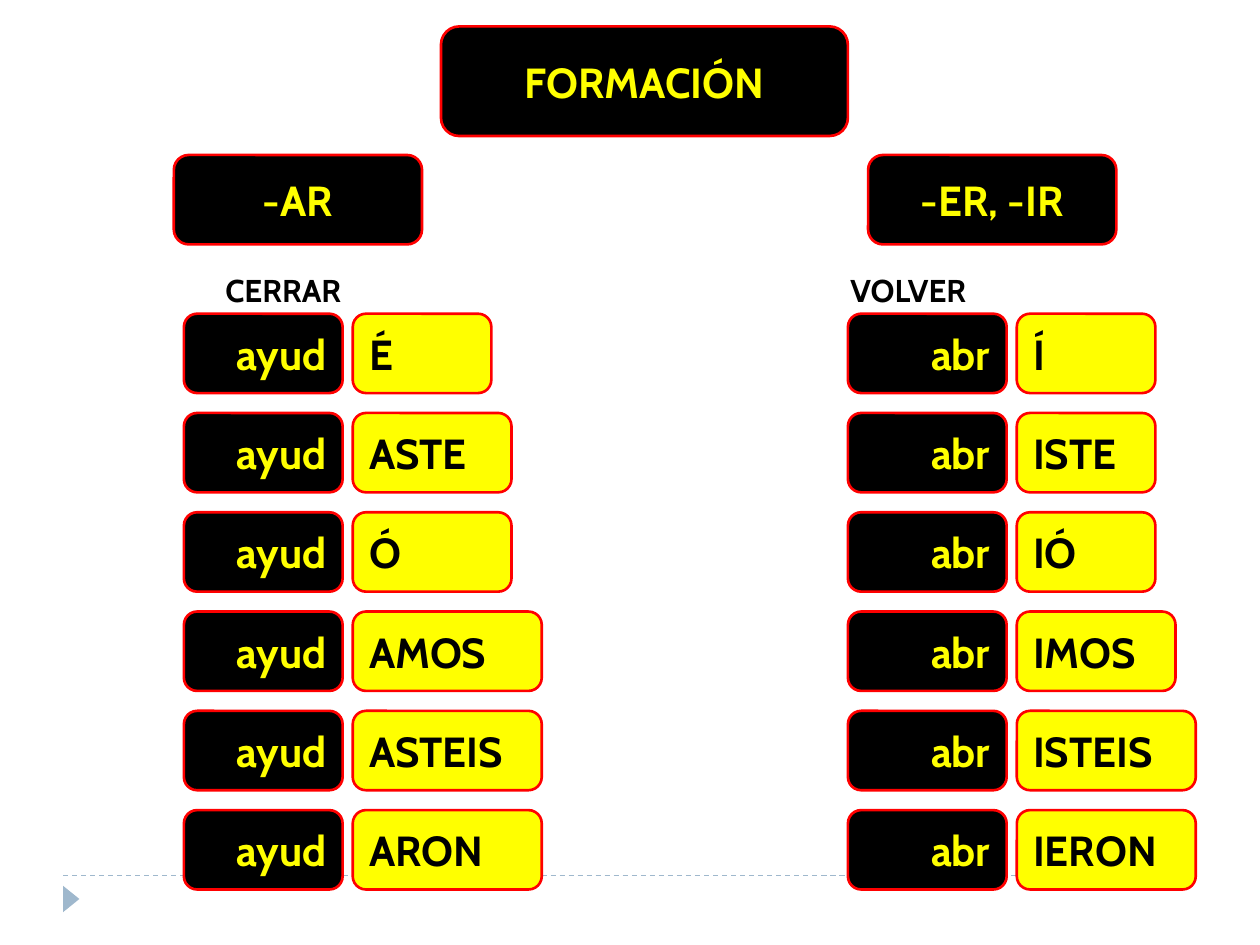
from dataclasses import dataclass

from lxml import etree
from pptx import Presentation
from pptx.dml.color import RGBColor
from pptx.enum.dml import MSO_LINE
from pptx.enum.shapes import MSO_CONNECTOR, MSO_SHAPE
from pptx.enum.text import MSO_ANCHOR, MSO_AUTO_SIZE, PP_ALIGN
from pptx.oxml.ns import qn
from pptx.util import Inches, Pt

DASH = MSO_LINE.DASH
STRAIGHT = MSO_CONNECTOR.STRAIGHT
ROUNDED, TRIANGLE = MSO_SHAPE.ROUNDED_RECTANGLE, MSO_SHAPE.ISOSCELES_TRIANGLE
MIDDLE = MSO_ANCHOR.MIDDLE
GROW = MSO_AUTO_SIZE.SHAPE_TO_FIT_TEXT
LEFT, CENTER, RIGHT = PP_ALIGN.LEFT, PP_ALIGN.CENTER, PP_ALIGN.RIGHT


@dataclass(frozen=True)
class Theme:
    """Font, type sizes and colours of the slide."""
    font: str = "Cabin"
    box_size: int = 24
    verb_size: int = 18
    black: RGBColor = RGBColor(0, 0, 0)
    yellow: RGBColor = RGBColor(255, 255, 0)
    red: RGBColor = RGBColor(255, 0, 0)
    accent: RGBColor = RGBColor(0x9F, 0xB8, 0xCD)


THEME = Theme()
ROW_TOP, ROW_STEP, ROW_HEIGHT = 2.49, 0.788, 0.63
STEM_WIDTH, ENDING_OFFSET = 1.26, 1.34

HEADINGS = [
    ("-AR", 1.38, 1.23, 1.97, 0.71),
    ("-ER, -IR", 6.89, 1.23, 1.97, 0.71),
    ("FORMACIÓN", 3.5, 0.21, 3.23, 0.87),
]
VERBS = [("CERRAR", 1.69, 1.26), ("VOLVER", 6.65, 1.23)]
CONJUGATIONS = [
    ("ayud", 1.46, [("É", 1.1), ("ASTE", 1.26), ("Ó", 1.26),
                    ("AMOS", 1.5), ("ASTEIS", 1.5), ("ARON", 1.5)]),
    ("abr", 6.73, [("Í", 1.1), ("ISTE", 1.1), ("IÓ", 1.1),
                   ("IMOS", 1.26), ("ISTEIS", 1.42), ("IERON", 1.42)]),
]


def add_text(tf, text, size, color, align=LEFT):
    """Write one bold run into the first paragraph."""
    p = tf.paragraphs[0]
    p.alignment = align
    r = p.add_run()
    r.text = text
    r.font.name = THEME.font
    r.font.size = Pt(size)
    r.font.bold = True
    r.font.color.rgb = color


def add_box(s, text, x, y, w, h, align=CENTER, fill=THEME.black, color=THEME.yellow):
    """Add a rounded box with a red outline."""
    sp = s.shapes.add_shape(ROUNDED, Inches(x), Inches(y), Inches(w), Inches(h))
    sp.shadow.inherit = False
    sp.fill.solid()
    sp.fill.fore_color.rgb = fill
    sp.line.color.rgb = THEME.red
    sp.line.width = Pt(1.5)
    sp.text_frame.vertical_anchor = MIDDLE
    add_text(sp.text_frame, text, THEME.box_size, color, align)


def add_verb(s, text, x, w):
    """Add the verb label above a column."""
    tf = s.shapes.add_textbox(Inches(x), Inches(2.1), Inches(w), Inches(0.4)).text_frame
    tf.word_wrap = False
    tf.auto_size = GROW
    add_text(tf, text, THEME.verb_size, THEME.black)


def add_footer(s):
    """Add the dashed rule and the marker at the foot."""
    y = Inches(6.95)
    rule = s.shapes.add_connector(STRAIGHT, Inches(0.5), y, Inches(9.5), y)
    rule.line.color.rgb = THEME.accent
    rule.line.width = Pt(0.75)
    rule.line.dash_style = DASH
    etree.SubElement(rule._element.spPr, qn("a:effectLst"))
    sp = s.shapes.add_shape(TRIANGLE, Inches(0.46), Inches(7.07), Inches(0.21), Inches(0.13))
    sp.rotation = 90
    sp.shadow.inherit = False
    sp.fill.solid()
    sp.fill.fore_color.rgb = THEME.accent
    sp.line.fill.background()


def add_conjugation(s, stem, x, endings):
    """Add a column of stem and ending boxes."""
    for i, (ending, width) in enumerate(endings):
        y = ROW_TOP + i * ROW_STEP
        add_box(s, ending, x + ENDING_OFFSET, y, width, ROW_HEIGHT,
                LEFT, THEME.yellow, THEME.black)
        add_box(s, stem, x, y, STEM_WIDTH, ROW_HEIGHT, RIGHT)


def main():
    """Build and save the slide."""
    prs = Presentation()
    prs.slide_width, prs.slide_height = Inches(10), Inches(7.5)
    s = prs.slides.add_slide(prs.slide_layouts[6])
    add_footer(s)
    for heading in HEADINGS:
        add_box(s, *heading)
    for verb in VERBS:
        add_verb(s, *verb)
    for conjugation in CONJUGATIONS:
        add_conjugation(s, *conjugation)
    prs.save("out.pptx")


if __name__ == "__main__":
    main()
